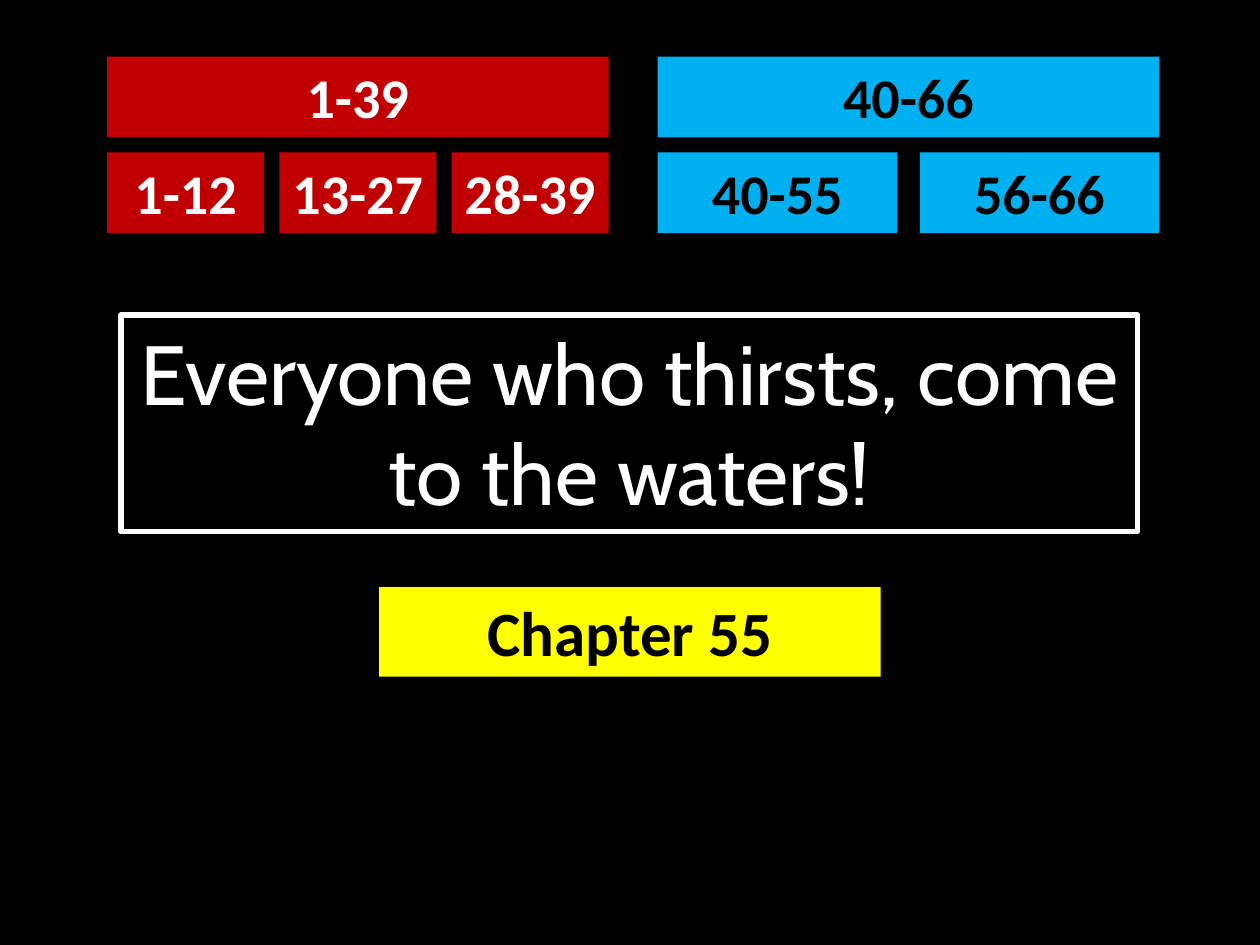
from dataclasses import dataclass

import pptx
import pptx.dml.color
import pptx.enum.text
import pptx.slide
import pptx.util

Inches = pptx.util.Inches

COLORS = {
    "black": "000000",
    "white": "FFFFFF",
    "red": "C00000",
    "blue": "00B0F0",
    "yellow": "FFFF00",
}
HALF = 3.98  # width of each half of the book
ROW = 0.64
TOPS = (0.45, 1.21)


@dataclass
class Box:
    text: str
    left: float
    top: float
    width: float
    height: float = ROW
    fill: str | None = None
    ink: str = "black"
    line: str | None = None
    size: int = 32
    font: str = "Calibri"
    bold: bool = True


@dataclass
class Part:
    """One half of the book, with its sections in a row below it."""
    text: str
    left: float
    fill: str
    ink: str
    gap: float
    sections: tuple[str, ...]


PARTS = (
    Part("1-39", 0.85, "red", "white", 0.12, ("1-12", "13-27", "28-39")),
    Part("40-66", 5.22, "blue", "black", 0.18, ("40-55", "56-66")),
)
VERSE = Box("Everyone who thirsts, come to the waters!", 0.96, 2.5, 8.07, 1.72,
            ink="white", line="white", size=48, font="Cabin", bold=False)
CHAPTER = Box("Chapter 55", 3.01, 4.66, HALF, 0.71, fill="yellow", size=36)


def color(name: str) -> pptx.dml.color.RGBColor:
    return pptx.dml.color.RGBColor.from_string(COLORS[name])


def draw_box(slide: pptx.slide.Slide, box: Box) -> None:
    shape = slide.shapes.add_textbox(Inches(box.left), Inches(box.top),
                                     Inches(box.width), Inches(box.height))
    if box.fill:
        shape.fill.solid()
        shape.fill.fore_color.rgb = color(box.fill)
    if box.line:
        shape.line.color.rgb = color(box.line)
        shape.line.width = pptx.util.Pt(3)
    frame = shape.text_frame
    frame.word_wrap = True
    frame.margin_left = frame.margin_right = Inches(0.08)
    frame.auto_size = pptx.enum.text.MSO_AUTO_SIZE.SHAPE_TO_FIT_TEXT
    line = frame.paragraphs[0]
    line.text = box.text
    line.alignment = pptx.enum.text.PP_ALIGN.CENTER
    line.font.name = box.font
    line.font.size = pptx.util.Pt(box.size)
    line.font.bold = box.bold
    line.font.color.rgb = color(box.ink)


def draw_part(slide: pptx.slide.Slide, part: Part) -> None:
    draw_box(slide, Box(part.text, part.left, TOPS[0], HALF,
                        fill=part.fill, ink=part.ink))
    count = len(part.sections)
    width = (HALF - part.gap * (count - 1)) / count
    for index, text in enumerate(part.sections):
        left = part.left + index * (width + part.gap)
        draw_box(slide, Box(text, left, TOPS[1], width,
                            fill=part.fill, ink=part.ink))


def main() -> None:
    deck = pptx.Presentation()
    deck.slide_width, deck.slide_height = Inches(10), Inches(7.5)
    slide = deck.slides.add_slide(deck.slide_layouts[6])
    slide.background.fill.solid()
    slide.background.fill.fore_color.rgb = color("black")
    for part in PARTS:
        draw_part(slide, part)
    for box in (VERSE, CHAPTER):
        draw_box(slide, box)
    deck.save("out.pptx")


if __name__ == "__main__":
    main()
